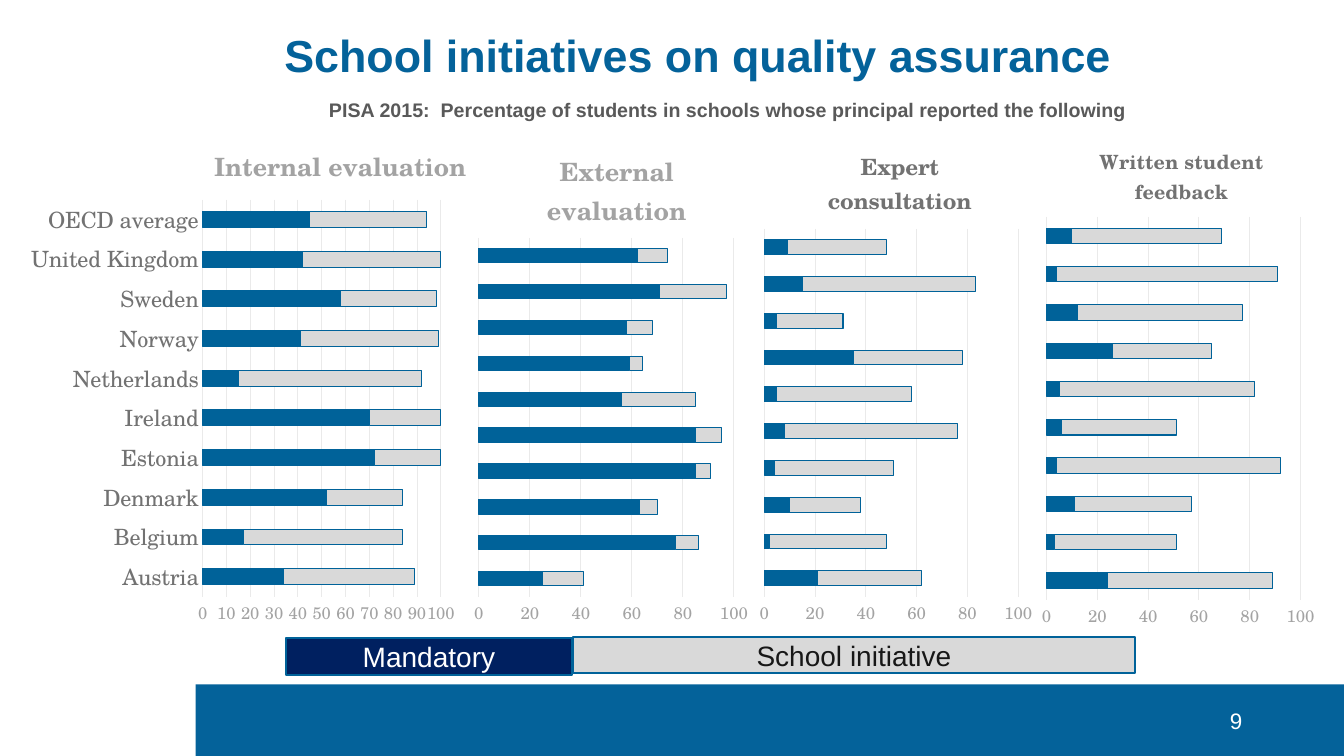
import pptx
import pptx.util
import pptx.chart.data
import pptx.dml.color
import pptx.enum.chart
import pptx.enum.shapes
import pptx.enum.text
import pptx.oxml
import pptx.oxml.ns

BLUE, BAR_BLUE, GREY, GRID = "04629A", "006299", "D9D9D9", "EAEAEA"
DARK, LIGHT = "727272", "A3A3A3"
SERIF = "TeX Gyre Schola"
COUNTRIES = ["Austria", "Belgium", "Denmark", "Estonia", "Ireland", "Netherlands",
             "Norway", "Sweden", "United Kingdom", "OECD average"]
CHARTS = [
    {"title": "Internal evaluation", "size": 18, "color": LIGHT, "step": 10, "labels": True,
     "box": (0.24, 1.19, 4.43, 5.11), "title_at": (2.1, 1.38), "plot": (2.03, 1.98, 2.39, 3.94),
     "mandatory": [34, 17, 52, 72, 70, 15, 41, 58, 42, 45],
     "initiative": [55, 67, 32, 28, 30, 77, 58, 40, 58, 49]},
    {"title": "External evaluation", "size": 18, "color": LIGHT, "step": 20, "labels": False,
     "box": (4.66, 1.19, 2.83, 5.1), "title_at": (5.38, 1.43), "plot": (4.75, 2.36, 2.53, 3.56),
     "mandatory": [25, 77, 63, 85, 85, 56, 59, 58, 71, 62],
     "initiative": [16, 9, 7, 6, 10, 29, 5, 10, 26, 12]},
    {"title": "Written student feedback", "size": 14, "color": DARK, "step": 20, "labels": False,
     "box": (10.28, 1.17, 2.82, 5.17), "title_at": (10.87, 1.39), "plot": (10.38, 2.15, 2.52, 3.8),
     "mandatory": [24, 3, 11, 4, 6, 5, 26, 12, 4, 10],
     "initiative": [65, 48, 46, 88, 45, 77, 39, 65, 87, 59]},
    {"title": "Expert consultation", "size": 16, "color": DARK, "step": 20, "labels": False,
     "box": (7.48, 1.19, 2.81, 5.12), "title_at": (8.17, 1.41), "plot": (7.58, 2.27, 2.52, 3.65),
     "mandatory": [21, 2, 10, 4, 8, 5, 35, 5, 15, 9],
     "initiative": [41, 46, 28, 47, 68, 53, 43, 26, 68, 39]},
]
LEGEND = [("Mandatory", (2.84, 6.33, 2.83, 0.37), "002060", "FFFFFF"),
          ("School initiative", (5.68, 6.32, 5.58, 0.36), GREY, "171717")]
SUBTITLE = "PISA 2015:  Percentage of students in schools whose principal reported the following"


def rgb(color):
    return pptx.dml.color.RGBColor.from_string(color)


def inches(box):
    return [pptx.util.Inches(length) for length in box]


def style_font(font, name, size, color, bold=False):
    font.name, font.size, font.bold = name, pptx.util.Pt(size), bold
    font.color.rgb = rgb(color)


def style_line(line, color, width):
    line.color.rgb = rgb(color)
    line.width = pptx.util.Pt(width)


def write(shape, text, size, color, align="CENTER", bold=False):
    frame = shape.text_frame
    frame.word_wrap = True
    frame.vertical_anchor = pptx.enum.text.MSO_ANCHOR.MIDDLE
    frame.margin_top = frame.margin_bottom = 0
    paragraph = frame.paragraphs[0]
    paragraph.alignment = getattr(pptx.enum.text.PP_ALIGN, align)
    run = paragraph.add_run()
    run.text = text
    style_font(run.font, "Arial", size, color, bold)


def add_box(slide, box, fill):
    shape = slide.shapes.add_shape(pptx.enum.shapes.MSO_SHAPE.RECTANGLE, *inches(box))
    shape.shadow.inherit = False
    shape.fill.solid()
    shape.fill.fore_color.rgb = rgb(fill)
    shape.line.fill.background()
    return shape


def place(parent, index, box, frame, inner=False):
    for layout in parent.findall(pptx.oxml.ns.qn("c:layout")):
        parent.remove(layout)
    left, top, width, height = frame
    fractions = [(box[0] - left) / width, (box[1] - top) / height]
    fractions += [length / total for length, total in zip(box[2:], (width, height))]
    target = '<c:layoutTarget val="inner"/>' if inner else ""
    modes = '<c:xMode val="edge"/><c:yMode val="edge"/>'
    values = "".join(f'<c:{key} val="{value:.4f}"/>' for key, value in zip("xywh", fractions))
    parent.insert(index, pptx.oxml.parse_xml(
        f'<c:layout {pptx.oxml.ns.nsdecls("c")}><c:manualLayout>'
        f'{target}{modes}{values}</c:manualLayout></c:layout>'))


def add_bars(slide, content):
    data = pptx.chart.data.CategoryChartData(number_format="0")
    data.categories = COUNTRIES
    data.add_series("Mandatory", content["mandatory"])
    data.add_series("School initiative", content["initiative"])
    chart = slide.shapes.add_chart(pptx.enum.chart.XL_CHART_TYPE.BAR_STACKED,
                                   *inches(content["box"]), data).chart
    style_font(chart.font, SERIF, 10, DARK)
    chart.has_legend = False
    chart.has_title = True
    run = chart.chart_title.text_frame.paragraphs[0].add_run()
    run.text = content["title"]
    style_font(run.font, SERIF, content["size"], content["color"], True)

    plot = chart.plots[0]
    plot.gap_width, plot.overlap, plot.vary_by_categories = 150, 100, False
    for series, color in zip(plot.series, (BAR_BLUE, GREY)):
        series.format.fill.solid()
        series.format.fill.fore_color.rgb = rgb(color)
        style_line(series.format.line, BAR_BLUE, 0.75)

    no_tick = pptx.enum.chart.XL_TICK_MARK.NONE
    for axis, size, color in ((chart.category_axis, 16, DARK), (chart.value_axis, 12, LIGHT)):
        axis.major_tick_mark = axis.minor_tick_mark = no_tick
        style_font(axis.tick_labels.font, SERIF, size, color)
    chart.category_axis.visible = content["labels"]
    style_line(chart.category_axis.format.line, GRID, 0.75)
    values = chart.value_axis
    values.minimum_scale, values.maximum_scale, values.major_unit = 0, 100, content["step"]
    values.format.line.fill.background()
    style_line(values.major_gridlines.format.line, GRID, 0.75)

    chart_element = chart.element.find(pptx.oxml.ns.qn("c:chart"))
    place(chart_element.find(pptx.oxml.ns.qn("c:title")), 1, content["title_at"], content["box"])
    place(chart_element.find(pptx.oxml.ns.qn("c:plotArea")), 0, content["plot"], content["box"], True)


def main():
    presentation = pptx.Presentation()
    presentation.slide_width, presentation.slide_height = inches((13.33, 7.5))
    slide = presentation.slides.add_slide(presentation.slide_layouts[5])

    add_box(slide, (1.94, 6.79, 11.39, 0.71), BLUE)
    title = slide.shapes.title
    title.left, title.top, title.width, title.height = inches((0.52, 0.12, 12.81, 0.84))
    write(title, "School initiatives on quality assurance", 32, BLUE, bold=True)
    page = slide.shapes.add_textbox(*inches((9.42, 6.95, 3, 0.4)))
    write(page, "9", 16, "FFFFFF", "RIGHT")
    for content in CHARTS:
        add_bars(slide, content)
    for text, box, fill, color in LEGEND:
        shape = add_box(slide, box, fill)
        style_line(shape.line, BAR_BLUE, 1.5)
        write(shape, text, 20, color)
    subtitle = slide.shapes.add_textbox(*inches((2.29, 0.92, 9.86, 0.34)))
    write(subtitle, SUBTITLE, 14, "595959", bold=True)
    presentation.save("out.pptx")


if __name__ == "__main__":
    main()
